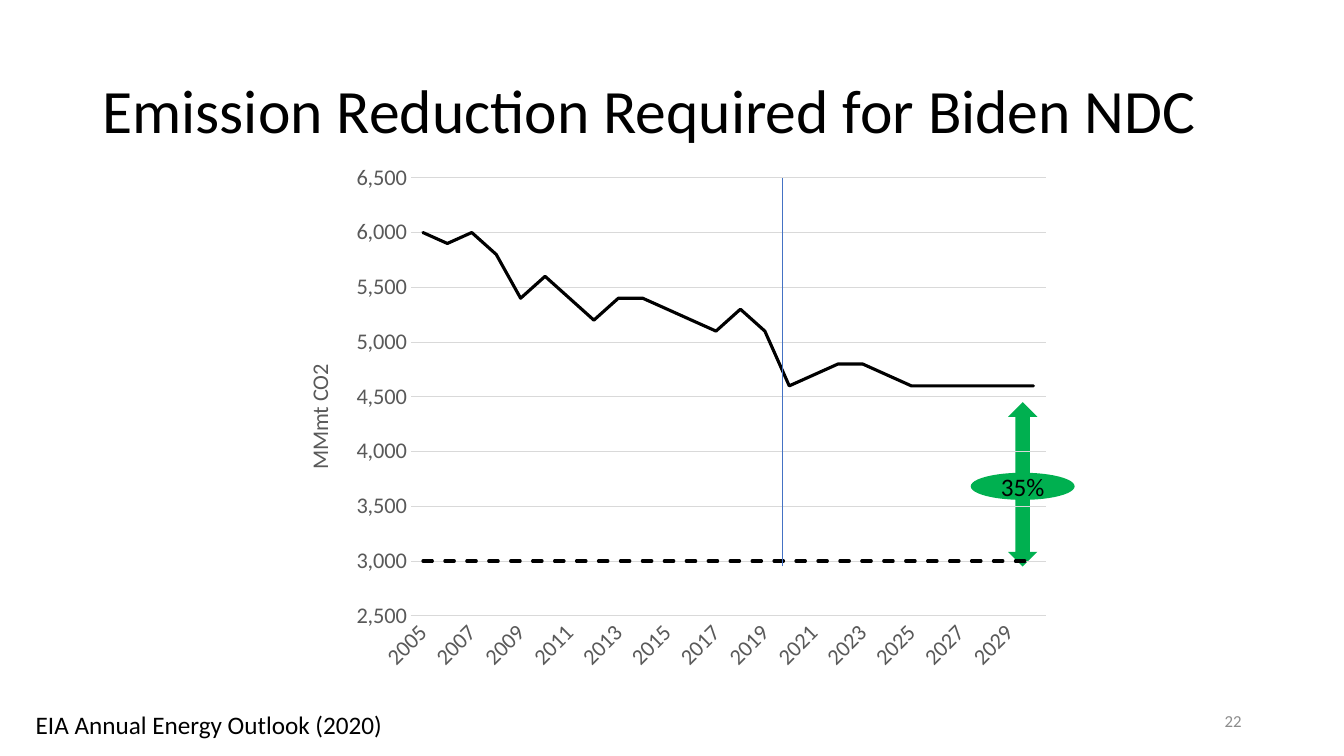
from lxml import etree
from pptx import Presentation
from pptx import util as u
from pptx.chart import data
from pptx.dml import color as dml
from pptx.enum import chart as charts, dml as lines, shapes, text
from pptx.oxml import ns

Pt = u.Pt
COLORS = {"ink": "000000", "axis": "595959", "grid": "D9D9D9",
          "gap": "00B050", "divider": "4472C4", "number": "8C8C8C"}
FONT = "Calibri"
YEARS = range(2005, 2031)
EMISSIONS = [6000, 5900, 6000, 5800, 5400, 5600, 5400, 5200, 5400, 5400, 5300, 5200, 5100,
             5300, 5100, 4600, 4700, 4800, 4800, 4700, 4600, 4600, 4600, 4600, 4600, 4600]
TARGET = 3000


def rgb(name):
    """Return the named colour."""
    return dml.RGBColor.from_string(COLORS[name])


def set_font(font, size, ink="ink"):
    """Set typeface, size and colour of a font."""
    font.name, font.size, font.bold = FONT, Pt(size), False
    font.color.rgb = rgb(ink)


def write(frame, words, size=18, ink="ink", align=text.PP_ALIGN.LEFT, spacing=None):
    """Write one formatted paragraph into a text frame."""
    paragraph = frame.paragraphs[0]
    paragraph.alignment = align
    if spacing:
        paragraph.line_spacing = spacing
    run = paragraph.add_run()
    run.text = words
    set_font(run.font, size, ink)


def add_heading(slide, box):
    """Place the slide title in its box."""
    heading = slide.shapes.title
    heading.left, heading.top, heading.width, heading.height = map(Pt, box)
    heading.text_frame.auto_size = text.MSO_AUTO_SIZE.NONE
    heading.text_frame.vertical_anchor = text.MSO_ANCHOR.MIDDLE
    write(heading.text_frame, "Emission Reduction Required for Biden NDC", size=44, spacing=0.9)


def add_note(slide, box, words, anchor=text.MSO_ANCHOR.TOP, **style):
    """Place a line of footer text in its box."""
    note = slide.shapes.add_textbox(*map(Pt, box)).text_frame
    note.word_wrap = True
    note.vertical_anchor = anchor
    write(note, words, **style)


def add_gap(slide, box):
    """Place the double arrow with its percentage badge in the middle of its box."""
    left, top, width, height = box
    arrow_width, badge_height = 20.9, 19.4
    group = slide.shapes.add_group_shape()
    arrow = group.shapes.add_shape(
        shapes.MSO_SHAPE.UP_DOWN_ARROW, Pt(left + (width - arrow_width) / 2), Pt(top),
        Pt(arrow_width), Pt(height))
    badge = group.shapes.add_shape(
        shapes.MSO_SHAPE.OVAL, Pt(left), Pt(top + (height - badge_height) / 2 + 1.4),
        Pt(width), Pt(badge_height))
    for part in (arrow, badge):
        part.shadow.inherit = False
        part.fill.solid()
        part.fill.fore_color.rgb = rgb("gap")
        part.line.fill.background()
    frame = badge.text_frame
    frame.margin_left = frame.margin_right = frame.margin_top = frame.margin_bottom = 0
    frame.vertical_anchor = text.MSO_ANCHOR.MIDDLE
    write(frame, "35%", align=text.PP_ALIGN.CENTER)


def set_layout(parent, index, box, **places):
    """Place a chart part, in points from the corner of the chart's box."""
    for old in parent.findall(ns.qn("c:layout")):
        parent.remove(old)
    layout = etree.Element(ns.qn("c:layout"))
    manual = etree.SubElement(layout, ns.qn("c:manualLayout"))
    if "w" in places:
        etree.SubElement(manual, ns.qn("c:layoutTarget"), val="inner")
    for key in ("xMode", "yMode"):
        etree.SubElement(manual, ns.qn(f"c:{key}"), val="edge")
    for key, value in places.items():
        whole = box[2] if key in "xw" else box[3]
        etree.SubElement(manual, ns.qn(f"c:{key}"), val=str(value / whole))
    parent.insert(index, layout)


def no_fill():
    """Return chart area properties without fill or outline."""
    area = etree.Element(ns.qn("c:spPr"))
    etree.SubElement(area, ns.qn("a:noFill"))
    outline = etree.SubElement(area, ns.qn("a:ln"))
    etree.SubElement(outline, ns.qn("a:noFill"))
    return area


def format_axes(chart, box):
    """Format both axes, the gridlines and the value axis title."""
    years, values = chart.category_axis, chart.value_axis
    for axis in (years, values):
        axis.major_tick_mark = axis.minor_tick_mark = charts.XL_TICK_MARK.NONE
        set_font(axis.tick_labels.font, 16, "axis")
    values.minimum_scale, values.maximum_scale, values.major_unit = 2500, 6500, 500
    values.tick_labels.number_format = "#,##0"
    values.tick_labels.number_format_is_linked = False
    values.format.line.fill.background()
    for rule in (years.format.line, values.major_gridlines.format.line):
        rule.color.rgb = rgb("grid")
        rule.width = Pt(0.75)
    write(values.axis_title.text_frame, "MMmt CO2", size=16, ink="axis")

    root = chart.element
    root.xpath(".//c:catAx/c:txPr/a:bodyPr")[0].set("rot", "-2700000")
    turned = root.xpath(".//c:valAx/c:title//a:bodyPr")[0]
    turned.set("rot", "-5400000")
    turned.set("vert", "horz")
    skip = etree.Element(ns.qn("c:tickLblSkip"), val="2")
    root.xpath(".//c:catAx/c:noMultiLvlLbl")[0].addprevious(skip)
    set_layout(root.xpath(".//c:valAx/c:title")[0], 1, box, x=13, y=148)


def add_emissions(slide, box):
    """Place the emissions line chart in its box."""
    figures = data.CategoryChartData(number_format="#,##0")
    figures.categories = [str(year) for year in YEARS]
    figures.add_series("Series 1", EMISSIONS)
    figures.add_series("Series 2", [TARGET] * len(YEARS))
    chart = slide.shapes.add_chart(
        charts.XL_CHART_TYPE.LINE, *map(Pt, box), figures).chart
    chart.has_title = chart.has_legend = False
    set_font(chart.font, 16)
    chart.plots[0].vary_by_categories = False
    for series in chart.plots[0].series:
        series.smooth = False
        series.format.line.color.rgb = rgb("ink")
        series.format.line.width = Pt(2.25)
    chart.plots[0].series[1].format.line.dash_style = lines.MSO_LINE.DASH
    for outline in chart.element.xpath(".//c:ser/c:spPr/a:ln"):
        outline.set("cap", "rnd")
    format_axes(chart, box)

    plot = chart.element.xpath(".//c:plotArea")[0]
    set_layout(plot, 0, box, x=91.8, y=17.6, w=453.6, h=313)
    plot.append(no_fill())
    chart.element.xpath("./c:chart")[0].addnext(no_fill())


def add_divider(slide, box):
    """Draw the vertical line between history and projection."""
    left, top, width, height = box
    divider = slide.shapes.add_connector(
        shapes.MSO_CONNECTOR.STRAIGHT, Pt(left), Pt(top + height), Pt(left + width), Pt(top))
    divider.line.color.rgb = rgb("divider")
    divider.line.width = Pt(0.5)
    etree.SubElement(divider.element.spPr, ns.qn("a:effectLst"))


def main():
    """Build and save the slide."""
    deck = Presentation()
    deck.slide_width, deck.slide_height = Pt(960), Pt(540)
    slide = deck.slides.add_slide(deck.slide_layouts[5])
    add_heading(slide, (66, 28.8, 828, 104.4))
    add_gap(slide, (693.4, 287.3, 74.2, 117.4))
    add_note(slide, (18.4, 503.3, 289.4, 28.8), "EIA Annual Energy Outlook (2020)")
    add_emissions(slide, (201.6, 109.4, 556.6, 377.3))
    add_divider(slide, (558.7, 127.4, 0, 277.2))
    add_note(slide, (678, 500.4, 216, 28.8), "22", anchor=text.MSO_ANCHOR.MIDDLE,
             size=12, ink="number", align=text.PP_ALIGN.RIGHT)
    deck.save("out.pptx")


if __name__ == "__main__":
    main()
